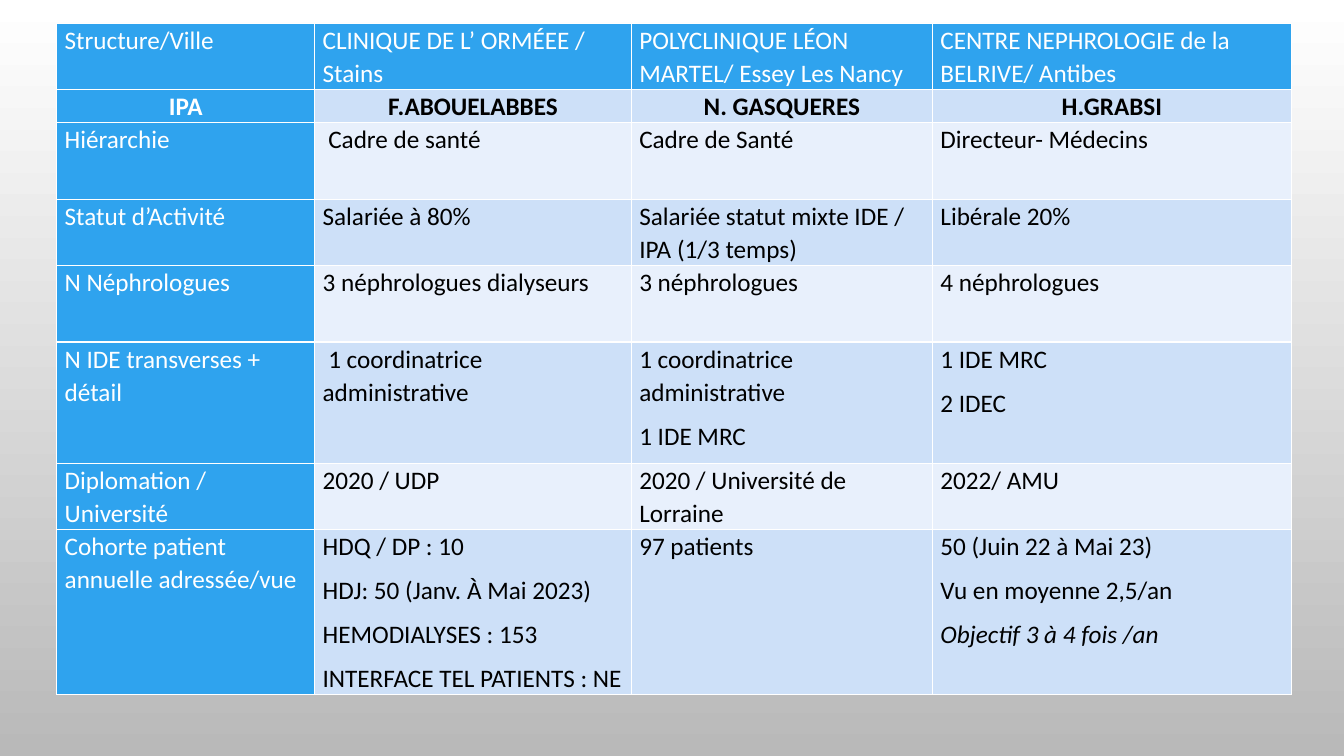
import pptx
import pptx.dml.color
import pptx.enum.text
import pptx.util

Cm = pptx.util.Cm
Pt = pptx.util.Pt

BLUE, BAND_DARK, BAND_LIGHT = "2FA3EE", "CDE0F8", "E8F0FC"
COLUMN_WIDTHS = [6.5, 7.98, 7.59, 9.04]
ROW_HEIGHTS = [1.66, 0.83, 1.94, 1.66, 1.94, 3.06, 1.66, 4.17]
OBJECTIVE = "Objectif 3 à 4 fois /an"
ROWS = [
    ["Structure/Ville", "CLINIQUE DE L’ ORMÉEE / Stains",
     "POLYCLINIQUE LÉON MARTEL/ Essey Les Nancy",
     "CENTRE NEPHROLOGIE de la BELRIVE/ Antibes"],
    ["IPA", "F.ABOUELABBES", "N. GASQUERES", "H.GRABSI"],
    ["Hiérarchie", " Cadre de santé", "Cadre de Santé", "Directeur- Médecins"],
    ["Statut d’Activité", "Salariée à 80%",
     "Salariée statut mixte IDE / IPA (1/3 temps)", "Libérale 20%"],
    ["N Néphrologues", "3 néphrologues dialyseurs", "3 néphrologues",
     "4 néphrologues"],
    ["N IDE transverses + détail", " 1 coordinatrice administrative",
     "1 coordinatrice administrative\n1 IDE MRC", "1 IDE MRC\n2 IDEC"],
    ["Diplomation / Université", "2020 / UDP", "2020 / Université de Lorraine",
     "2022/ AMU"],
    ["Cohorte patient annuelle adressée/vue",
     "HDQ / DP : 10\nHDJ: 50 (Janv. À Mai 2023)\nHEMODIALYSES : 153\n"
     "INTERFACE TEL PATIENTS : NE",
     "97 patients",
     "50 (Juin 22 à Mai 23)\nVu en moyenne 2,5/an\n" + OBJECTIVE],
]


def color(value):
    """Return the colour of a hex string."""
    return pptx.dml.color.RGBColor.from_string(value)


def paint_background(s):
    """Fill the slide from white at the top to grey at the bottom."""
    fill = s.background.fill
    fill.gradient()
    fill.gradient_angle = 270
    for stop, position, value in zip(fill.gradient_stops, (0, 1), ("FFFFFF", "B9B9B9")):
        stop.position = position
        stop.color.rgb = color(value)


def fill_cell(cell, text, fill, text_color, is_name):
    """Write the lines of a cell and paint it."""
    cell.margin_left = cell.margin_right = Cm(0.2)
    cell.margin_top = cell.margin_bottom = 0
    cell.fill.solid()
    cell.fill.fore_color.rgb = color(fill)
    tf = cell.text_frame
    for i, line in enumerate(text.split("\n")):
        p = tf.paragraphs[0] if i == 0 else tf.add_paragraph()
        p.line_spacing = 1.07
        p.space_after = Pt(8)
        if is_name:
            p.alignment = pptx.enum.text.PP_ALIGN.CENTER
        r = p.add_run()
        r.text = line
        r.font.name = "Calibri"
        r.font.size = Pt(18)
        r.font.bold = is_name
        r.font.italic = line == OBJECTIVE
        r.font.color.rgb = color(text_color)


def add_comparison(s, left, top):
    """Place the table comparing the three structures."""
    table = s.shapes.add_table(
        len(ROWS), len(COLUMN_WIDTHS), Cm(left), Cm(top),
        Cm(sum(COLUMN_WIDTHS)), Cm(sum(ROW_HEIGHTS))).table
    for column, width in zip(table.columns, COLUMN_WIDTHS):
        column.width = Cm(width)
    for i, (row, height, texts) in enumerate(zip(table.rows, ROW_HEIGHTS, ROWS)):
        row.height = Cm(height)
        band = BAND_DARK if i % 2 else BAND_LIGHT
        for j, text in enumerate(texts):
            heading = i == 0 or j == 0
            fill_cell(row.cells[j], text, BLUE if heading else band,
                      "FFFFFF" if heading else "000000", i == 1)


def main():
    """Build the slide and save it."""
    prs = pptx.Presentation()
    prs.slide_width, prs.slide_height = Cm(33.87), Cm(19.05)
    s = prs.slides.add_slide(prs.slide_layouts[6])
    paint_background(s)
    add_comparison(s, 1.43, 0.59)
    prs.save("out.pptx")


if __name__ == "__main__":
    main()
